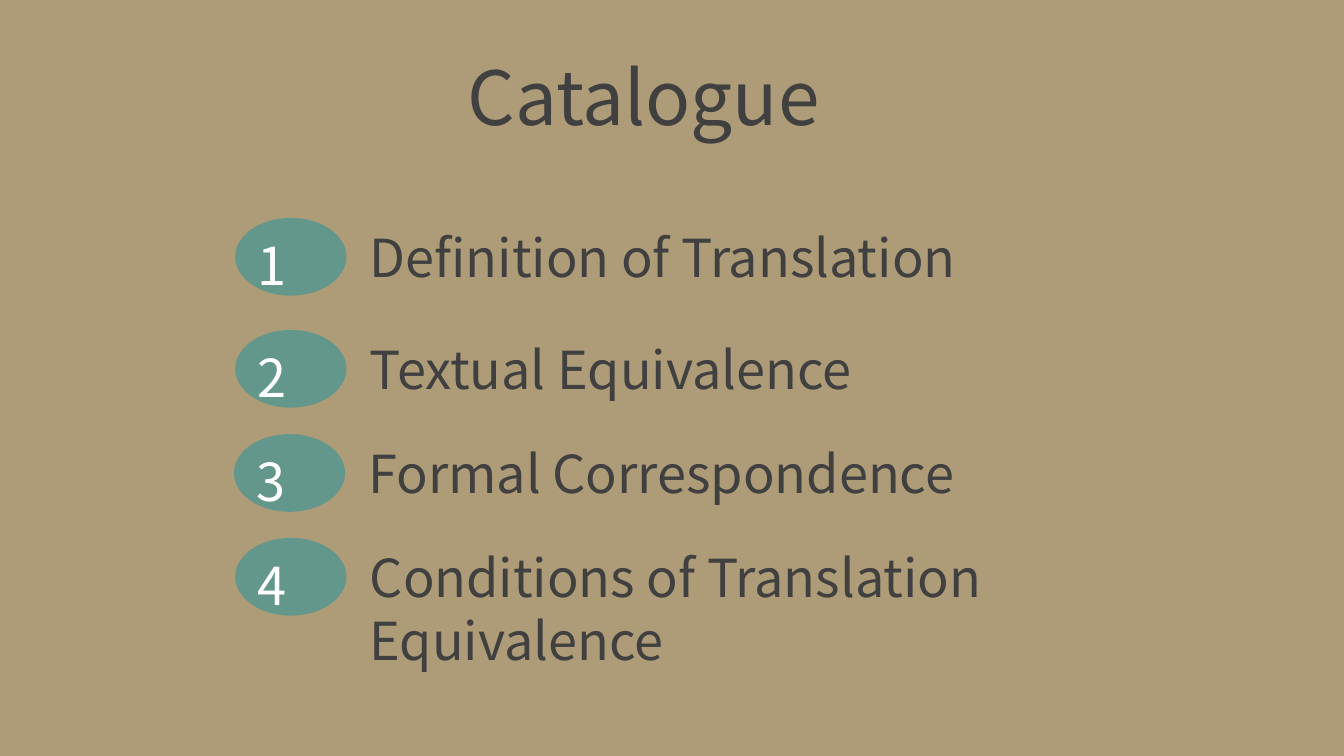
from dataclasses import dataclass

from pptx import Presentation
from pptx.dml.color import RGBColor
from pptx.enum.shapes import MSO_SHAPE
from pptx.enum.text import MSO_ANCHOR, MSO_AUTO_SIZE, PP_ALIGN
from pptx.shapes.group import GroupShape
from pptx.slide import Slide
from pptx.text.text import TextFrame
from pptx.util import Pt

OVAL = MSO_SHAPE.OVAL
TOP = MSO_ANCHOR.TOP
GROW = MSO_AUTO_SIZE.SHAPE_TO_FIT_TEXT
LEFT, JUSTIFY = PP_ALIGN.LEFT, PP_ALIGN.JUSTIFY

COLORS = {"background": "AE9B77", "badge": "63978B", "ink": "404040", "number": "FFFFFF"}
FONT = "Noto Sans CJK SC"
LINE_HEIGHT = 40.8


@dataclass
class Entry:
    topic: str
    top: float
    left: float = 126
    height: float = LINE_HEIGHT


ENTRIES = [
    Entry("Definition of Translation", 116.8),
    Entry("Textual Equivalence", 176.8),
    Entry("Formal Correspondence", 232.6, left=125.3),
    Entry("Conditions of Translation Equivalence", 288.2, height=74.9),
]


def color(key: str) -> RGBColor:
    return RGBColor.from_string(COLORS[key])


def write(frame: TextFrame, wording: str, size: float, ink: str, align: PP_ALIGN = LEFT) -> None:
    frame.word_wrap = True
    frame.auto_size = GROW
    frame.vertical_anchor = TOP
    paragraph = frame.paragraphs[0]
    paragraph.text = wording
    paragraph.alignment = align
    paragraph.font.name = FONT
    paragraph.font.size = Pt(size)
    paragraph.font.color.rgb = color(ink)


def add_label(row: GroupShape, wording: str, left: float, top: float, width: float,
              height: float, ink: str, align: PP_ALIGN = LEFT) -> None:
    label = row.shapes.add_textbox(Pt(left), Pt(top), Pt(width), Pt(height))
    write(label.text_frame, wording, 28, ink, align)


def add_entry(slide: Slide, number: int, entry: Entry) -> None:
    row = slide.shapes.add_group_shape()
    badge = row.shapes.add_shape(OVAL, Pt(entry.left), Pt(entry.top), Pt(59.6), Pt(41.6))
    badge.shadow.inherit = False
    badge.fill.solid()
    badge.fill.fore_color.rgb = color("badge")
    badge.line.fill.background()
    add_label(row, str(number), entry.left + 5, entry.top + 4.7, 51.1, LINE_HEIGHT,
              "number", JUSTIFY)
    add_label(row, entry.topic, entry.left + 65, entry.top + 0.5, 387.4, entry.height, "ink")


def main() -> None:
    deck = Presentation()
    deck.slide_width, deck.slide_height = Pt(720), Pt(405)
    slide = deck.slides.add_slide(deck.slide_layouts[5])
    slide.background.fill.solid()
    slide.background.fill.fore_color.rgb = color("background")

    title = slide.shapes.title
    title.left, title.top, title.width, title.height = Pt(243.4), Pt(23.8), Pt(209.5), Pt(55.4)
    write(title.text_frame, "Catalogue", 40, "ink")

    for number, entry in enumerate(ENTRIES, start=1):
        add_entry(slide, number, entry)
    deck.save("out.pptx")


if __name__ == "__main__":
    main()
